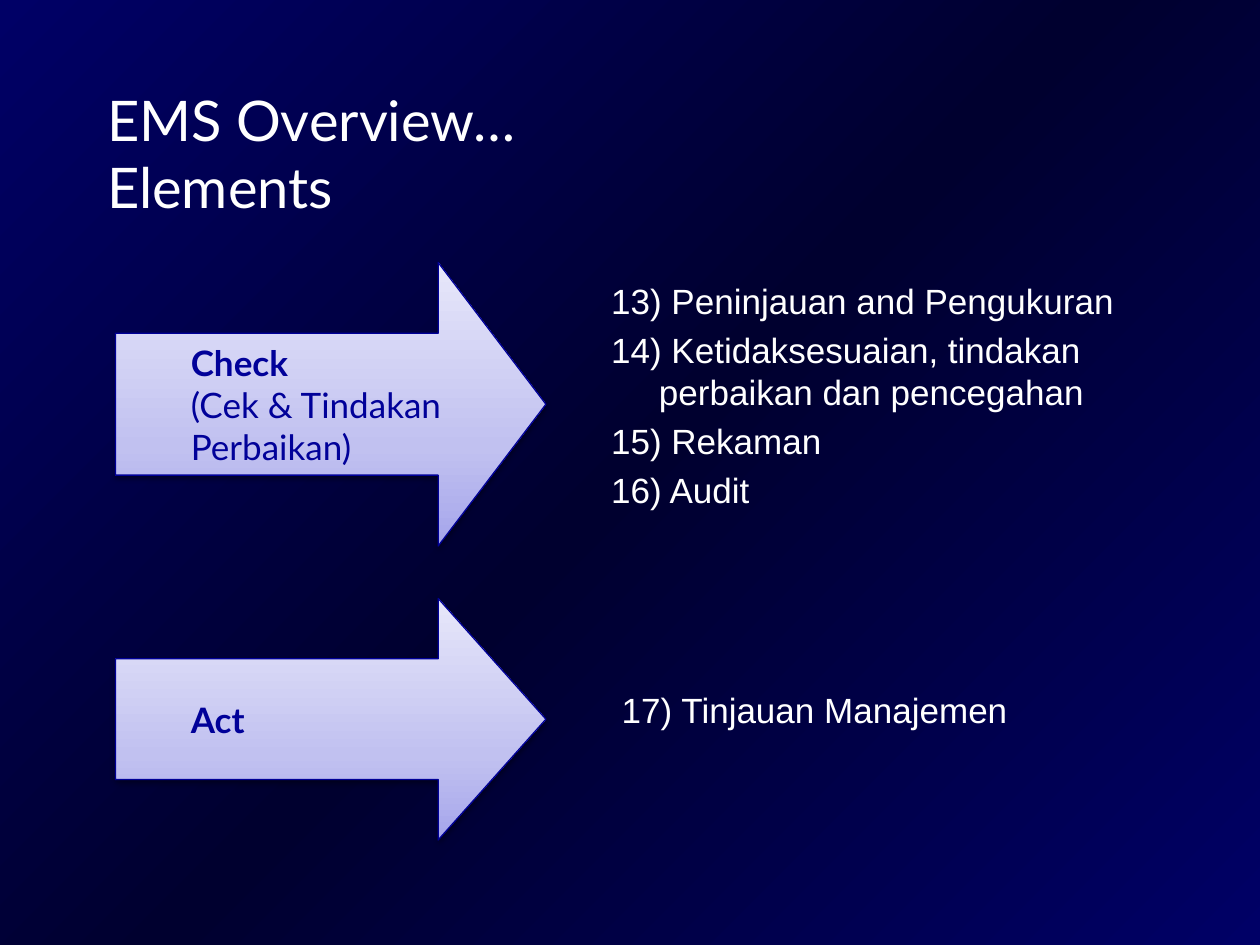
from copy import deepcopy
from lxml.etree import SubElement as Sub
from pptx import Presentation
from pptx.dml.color import RGBColor as RGB
from pptx.enum.shapes import MSO_SHAPE as SHAPE
from pptx.enum.text import MSO_ANCHOR as ANCHOR, MSO_AUTO_SIZE as FIT, PP_ALIGN as ALIGN
from pptx.oxml.ns import qn
from pptx.util import Inches, Pt

C = {"navy": "000066", "night": "00002F", "white": "FFFFFF", "ink": "010199",
     "edge": "000097", "low": "A5A5EB", "mid": "C1C1F0", "high": "E7E7FA", "black": "000000"}

prs = Presentation()
prs.slide_width, prs.slide_height = Inches(10), Inches(7.5)
W, H = prs.slide_width, prs.slide_height
COL, ROW = W / 120, H / 90
s = prs.slides.add_slide(prs.slide_layouts[3])


def write(tf, text, size=20, font="Arial", color="white", bold=False,
          left=0, hang=0, before=0, first=False):
    p = tf.paragraphs[0] if first else tf.add_paragraph()
    p.text = text
    p.alignment = ALIGN.LEFT
    p.space_before = Pt(0 if first else before)
    pPr = p._p.get_or_add_pPr()
    pPr.set("marL", str(Inches(left)))
    pPr.set("indent", str(-Inches(hang)))
    Sub(pPr, qn("a:buNone"))
    for r in p.runs:
        r.font.size, r.font.name, r.font.bold = Pt(size), font, bold
        r.font.color.rgb = RGB.from_string(C[color])


def shade(fill, element, stops, angle):
    fill.gradient()
    fill.gradient_angle = angle
    gs = next(element.iter(qn("a:gsLst")))
    gs.append(deepcopy(gs[0]))
    for stop, (pos, color) in zip(fill.gradient_stops, stops):
        stop.position = pos
        stop.color.rgb = RGB.from_string(C[color])


shade(s.background.fill, s._element, [(0, "navy"), (0.5, "night"), (1, "navy")], 315)

title, checks, acts = s.placeholders
for sp, (x, y, w, h) in [(title, (9, 8, 102, 13)), (checks, (57, 26, 52, 26)),
                         (acts, (58, 65, 51, 7))]:
    sp.left, sp.top = int(x * COL), int(y * ROW)
    sp.width, sp.height = int(w * COL), int(h * ROW)
    sp.text_frame.auto_size = FIT.NONE
    sp.text_frame.word_wrap = True

title.text_frame.vertical_anchor = ANCHOR.MIDDLE
write(title.text_frame, "EMS Overview…\nElements", size=32, font="Lato", first=True)

lists = [(checks, ["13) Peninjauan and Pengukuran",
                   "14) Ketidaksesuaian, tindakan perbaikan dan pencegahan",
                   "15) Rekaman", "16) Audit"]),
         (acts, ["17) Tinjauan Manajemen"])]
for sp, items in lists:
    sp.text_frame.vertical_anchor = ANCHOR.TOP
    for i, item in enumerate(items):
        write(sp.text_frame, item, left=0.38, hang=0.38, before=4, first=i == 0)

arrows = [(25, 27, 0.38, ["Check", "(Cek & Tindakan Perbaikan)"]),
          (57, 23, 0.446, ["Act"])]
for y, h, head, lines in arrows:
    sp = s.shapes.add_shape(SHAPE.RIGHT_ARROW, int(11 * COL), int(y * ROW),
                            int(41 * COL), int(h * ROW))
    sp.adjustments[0], sp.adjustments[1] = 0.5, head
    shade(sp.fill, sp._element, [(0, "low"), (0.35, "mid"), (1, "high")], 90)
    sp.line.color.rgb = RGB.from_string(C["edge"])
    sp.line.width = Pt(0.75)
    sp.shadow.inherit = False
    shadow = Sub(sp._element.spPr.find(qn("a:effectLst")), qn("a:outerShdw"),
                 blurRad=str(Pt(3.1)), dist=str(Pt(1.6)), dir="5400000", rotWithShape="0")
    tint = Sub(shadow, qn("a:srgbClr"), val=C["black"])
    Sub(tint, qn("a:alpha"), val="38000")
    tf = sp.text_frame
    tf.word_wrap = True
    tf.vertical_anchor = ANCHOR.MIDDLE
    for i, line in enumerate(lines):
        write(tf, line, font="Lato", color="ink", bold=i == 0, left=0.5, first=i == 0)

prs.save("out.pptx")
